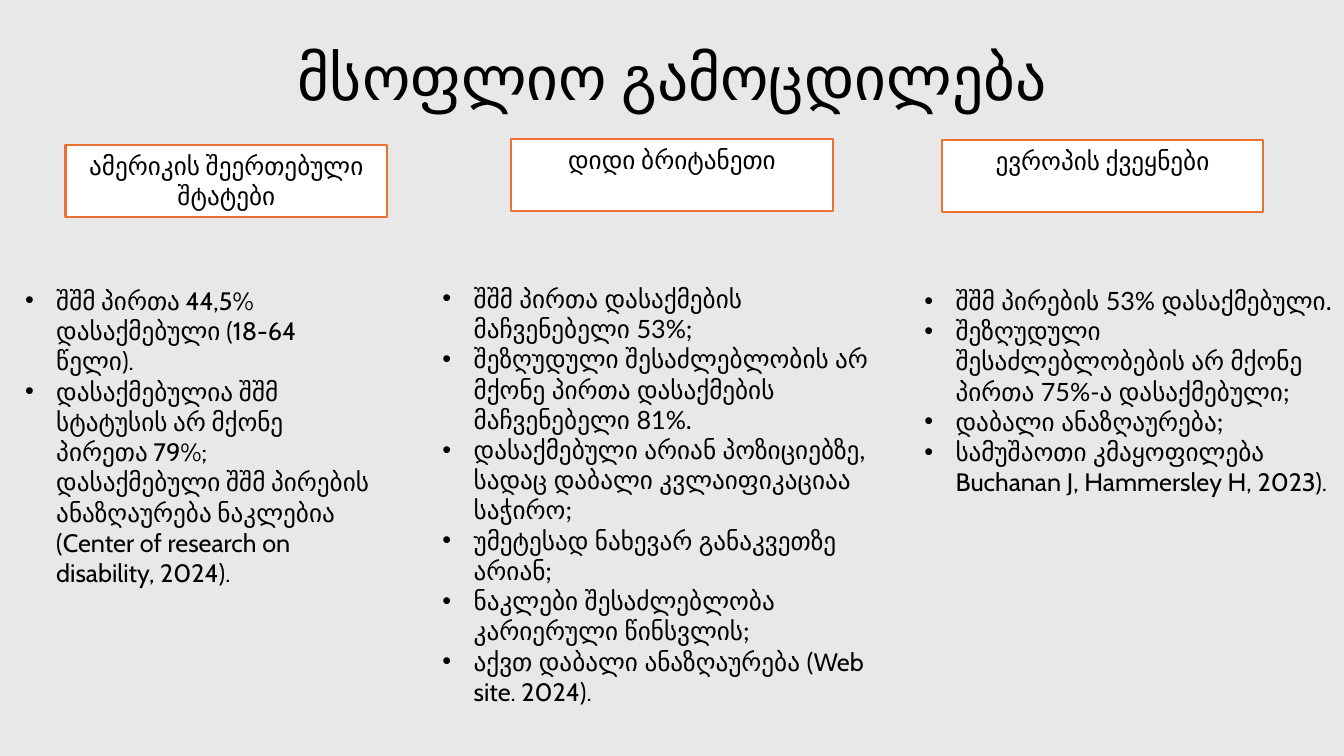
from lxml import etree
from pptx import Presentation
from pptx import util as u
from pptx.dml.color import RGBColor
from pptx.enum import shapes, text
from pptx.oxml import ns

BLACK = RGBColor(0x00, 0x00, 0x00)
WHITE = RGBColor(0xFF, 0xFF, 0xFF)
ORANGE = RGBColor(0xE9, 0x71, 0x32)
GREY = RGBColor(0xE8, 0xE8, 0xE8)
HEADING_FONT = "Cabin"
BODY_FONT = "Lato"


def style(span, size, font):
    span.font.size = u.Pt(size)
    span.font.name = font
    span.font.color.rgb = BLACK


def add_bullet(para):
    properties = para._p.get_or_add_pPr()
    properties.set("marL", str(u.Inches(0.31)))
    properties.set("indent", str(u.Inches(-0.31)))
    etree.SubElement(properties, ns.qn("a:buFont")).set("typeface", "Arial")
    etree.SubElement(properties, ns.qn("a:buChar")).set("char", "•")


# Each region: heading, heading place, list place (left, top, width, height),
# and bullets as lists of (text, font) spans.
regions = [
    ("ამერიკის შეერთებული შტატები", (0.65, 1.44), (0.15, 2.78, 3.67, 2.83), [
        [("შშმ პირთა 44,5% დასაქმებული (18-64 წელი).", HEADING_FONT)],
        [("დასაქმებულია შშმ სტატუსის არ მქონე პირეთა 79%; "
          "დასაქმებული შშმ პირების ანაზღაურება ნაკლებია "
          "(Center of research on disability, 2024).", HEADING_FONT)],
    ]),
    ("დიდი ბრიტანეთი", (5.07, 1.38), (4.29, 2.76, 4.6, 4.34), [
        [("შშმ პირთა დასაქმების მაჩვენებელი 53%;", BODY_FONT)],
        [("შეზღუდული შესაძლებლობის არ მქონე პირთა დასაქმების "
          "მაჩვენებელი 81%.", BODY_FONT)],
        [("დასაქმებული არიან პოზიციებზე, სადაც დაბალი "
          "კვლაიფიკაციაა საჭირო;", BODY_FONT)],
        [("უმეტესად ნახევარ განაკვეთზე არიან;", BODY_FONT)],
        [("ნაკლები შესაძლებლობა კარიერული წინსვლის;", BODY_FONT)],
        [("აქვთ დაბალი ანაზღაურება (", BODY_FONT),
         ("Web site. 2024).", HEADING_FONT)],
    ]),
    ("ევროპის ქვეყნები", (9.34, 1.39), (9.07, 2.78, 4.26, 2.52), [
        [("შშმ პირების 53% დასაქმებული.", BODY_FONT)],
        [("შეზღუდული შესაძლებლობების არ მქონე პირთა 75%-ა "
          "დასაქმებული;", BODY_FONT)],
        [("დაბალი ანაზღაურება;", BODY_FONT)],
        [("სამუშაოთი კმაყოფილება ", BODY_FONT),
         ("Buchanan J, Hammersley H, 2023).", HEADING_FONT)],
    ]),
]

deck = Presentation()
deck.slide_width = u.Inches(13.33)
deck.slide_height = u.Inches(7.5)
page = deck.slides.add_slide(deck.slide_layouts[5])
page.background.fill.solid()
page.background.fill.fore_color.rgb = GREY

title = page.shapes.title
title.left, title.top = u.Inches(0.92), u.Inches(0.4)
title.width, title.height = u.Inches(11.5), u.Inches(0.79)
title.text_frame.text = "მსოფლიო გამოცდილება"
title.text_frame.auto_size = text.MSO_AUTO_SIZE.NONE
title.text_frame.vertical_anchor = text.MSO_ANCHOR.MIDDLE
title_para = title.text_frame.paragraphs[0]
title_para.alignment = text.PP_ALIGN.CENTER
title_para.line_spacing = 0.9
style(title_para.runs[0], 44, HEADING_FONT)

for heading, (left, top), list_place, bullets in regions:
    box = page.shapes.add_shape(
        shapes.MSO_SHAPE.RECTANGLE,
        u.Inches(left), u.Inches(top), u.Inches(3.19), u.Inches(0.71))
    box.shadow.inherit = False
    box.fill.solid()
    box.fill.fore_color.rgb = WHITE
    box.line.color.rgb = ORANGE
    box.line.width = u.Pt(1.5)
    box.text_frame.word_wrap = True
    box.text_frame.vertical_anchor = text.MSO_ANCHOR.TOP
    box.text_frame.text = heading
    heading_para = box.text_frame.paragraphs[0]
    heading_para.alignment = text.PP_ALIGN.CENTER
    style(heading_para.runs[0], 18, HEADING_FONT)

    frame = page.shapes.add_textbox(*map(u.Inches, list_place)).text_frame
    frame.word_wrap = True
    for index, spans in enumerate(bullets):
        para = frame.add_paragraph() if index else frame.paragraphs[0]
        add_bullet(para)
        for words, font in spans:
            span = para.add_run()
            span.text = words
            style(span, 18, font)

deck.save("out.pptx")
